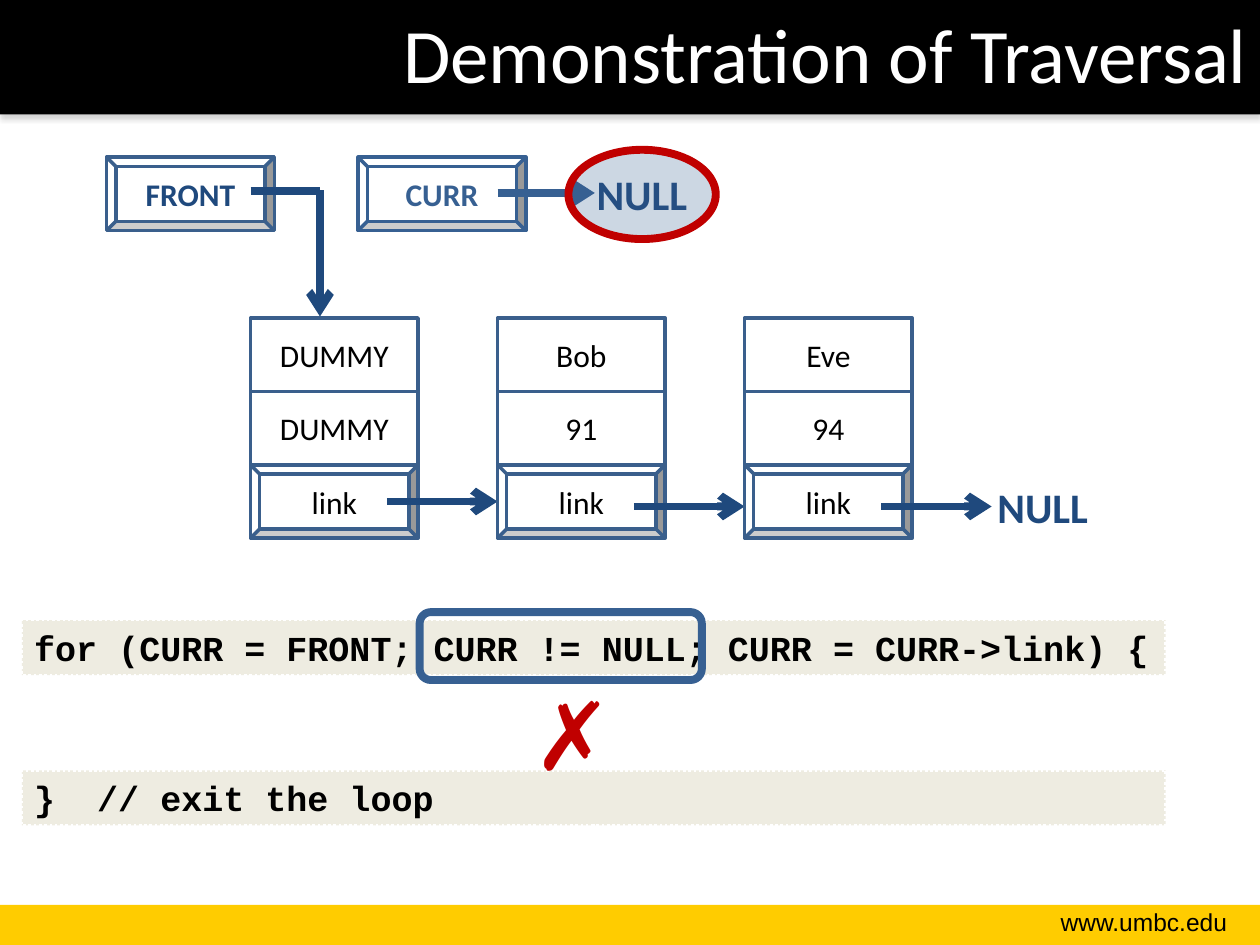
from lxml import etree
from pptx import Presentation
from pptx.dml.color import RGBColor
from pptx.enum.dml import MSO_LINE
from pptx.enum.shapes import MSO_CONNECTOR, MSO_SHAPE as Shape
from pptx.enum.text import MSO_ANCHOR as Anchor, PP_ALIGN as Align
from pptx.oxml import parse_xml
from pptx.oxml.ns import nsdecls, qn
from pptx.util import Cm, Pt

rgb = RGBColor.from_string
NAVY, BLUE, EDGE, RED = "1F497D", "376092", "3A5F8C", "C00000"
BLACK, WHITE, SAND, GOLD = "000000", "FFFFFF", "EEECE1", "FFCC00"

deck = Presentation()
deck.slide_width, deck.slide_height = Cm(25.4), Cm(19.05)
slide = deck.slides.add_slide(deck.slide_layouts[6])


def add_box(kind, at, fill=None, edge=None, weight=2, text="", size=18,
            color=BLACK, bold=False, font="Calibri", align=Align.CENTER,
            anchor=Anchor.MIDDLE):
    """Add a preset shape, or a text box when kind is None."""
    place = [Cm(v) for v in at]
    if kind is None:
        box = slide.shapes.add_textbox(*place)
    else:
        box = slide.shapes.add_shape(kind, *place)
        box.shadow.inherit = False
        if fill:
            box.fill.solid()
            box.fill.fore_color.rgb = rgb(fill)
        else:
            box.fill.background()
        if edge:
            box.line.color.rgb = rgb(edge)
            box.line.width = Pt(weight)
        else:
            box.line.fill.background()
    if text:
        frame = box.text_frame
        frame.word_wrap = True
        frame.vertical_anchor = anchor
        paragraph = frame.paragraphs[0]
        paragraph.alignment = align
        run = paragraph.add_run()
        run.text = text
        run.font.size, run.font.bold, run.font.name = Pt(size), bold, font
        run.font.color.rgb = rgb(color)
    return box


def add_line(x1, y1, x2, y2, color=NAVY, arrow=True):
    line = slide.shapes.add_connector(
        MSO_CONNECTOR.STRAIGHT, Cm(x1), Cm(y1), Cm(x2), Cm(y2))
    line.line.color.rgb = rgb(color)
    line.line.width = Pt(4.5)
    if arrow:
        etree.SubElement(line.line._get_or_add_ln(), qn("a:tailEnd"), type="arrow")
    etree.SubElement(line._element.spPr, qn("a:effectLst"))


# Header and footer
add_box(Shape.RECTANGLE, (0, 18.24, 25.4, 0.81), GOLD)
header = add_box(Shape.RECTANGLE, (0, 0, 25.4, 2.31), BLACK)
header_effects = header._element.spPr.find(qn("a:effectLst"))
header_effects.append(parse_xml(
    f'<a:outerShdw {nsdecls("a")} blurRad="39370" dist="22860" dir="5400000" '
    'rotWithShape="0"><a:srgbClr val="808080"><a:alpha val="35000"/></a:srgbClr>'
    '</a:outerShdw>'))
add_box(None, (19.94, 18.16, 5.05, 0.86), text="www.umbc.edu", size=14,
        font="Arial", align=Align.RIGHT, anchor=Anchor.TOP)
add_box(None, (2.54, 0, 22.86, 3.18), text="Demonstration of Traversal", size=44,
        color=WHITE, align=Align.RIGHT, anchor=Anchor.TOP)

# Linked list nodes, each with an arrow to the next
CELL_W, CELL_H = 3.38, 1.48
NODE_LEFT, NODE_TOP, NODE_STEP = 5.05, 6.41, 4.98
nodes = [("DUMMY", "DUMMY", 10.11), ("Bob", "91", 10.21), ("Eve", "94", 10.21)]
for i, (name, grade, link_y) in enumerate(nodes):
    left = NODE_LEFT + i * NODE_STEP
    for row, label in reversed(list(enumerate((name, grade, "link")))):
        add_box(Shape.BEVEL if label == "link" else Shape.RECTANGLE,
                (left, NODE_TOP + row * CELL_H, CELL_W, CELL_H),
                WHITE, EDGE, text=label)
    add_line(left + 2.75, link_y, left + NODE_STEP, link_y)

# FRONT and CURR pointers
for label, left, edge, color in (("FRONT", 2.15, EDGE, NAVY), ("CURR", 7.22, BLUE, BLUE)):
    add_box(Shape.BEVEL, (left, 3.17, CELL_W, CELL_H), WHITE, edge,
            text=label, color=color, bold=True)
add_line(6.45, 3.84, 6.45, 6.38)
add_line(5.05, 3.85, 6.45, 3.85, arrow=False)

for left, top in ((19.05, 9.58), (10.97, 3.28)):
    add_box(None, (left, top, 3.94, 1.3), text="NULL", size=24, color=NAVY,
            bold=True, anchor=Anchor.TOP)

# Loop code with the failing condition marked
code_lines = [("for (CURR = FRONT; CURR != NULL; CURR = CURR->link) {", 12.5),
              ("}  // exit the loop", 15.53)]
for code, top in code_lines:
    strip = add_box(Shape.RECTANGLE, (0.44, top, 23.06, 1.11), SAND, WHITE, 1.5,
                    text=code, size=20, bold=True, font="Courier New",
                    align=Align.LEFT)
    strip.line.dash_style = MSO_LINE.ROUND_DOT
add_box(Shape.ROUNDED_RECTANGLE, (8.46, 12.34, 5.69, 1.37), None, BLUE, 4.5)
add_box(None, (10.11, 13.51, 2.87, 2.57), text="✗", size=54, color=RED,
        bold=True, anchor=Anchor.TOP)

# CURR has reached NULL
add_line(10.03, 3.89, 11.99, 3.89, BLUE)
highlight = add_box(Shape.OVAL, (11.46, 3.02, 2.97, 1.8), BLUE, RED, 4.5)
tint = highlight._element.spPr.find(qn("a:solidFill"))[0]
etree.SubElement(tint, qn("a:alpha"), val="25000")

deck.save("out.pptx")
